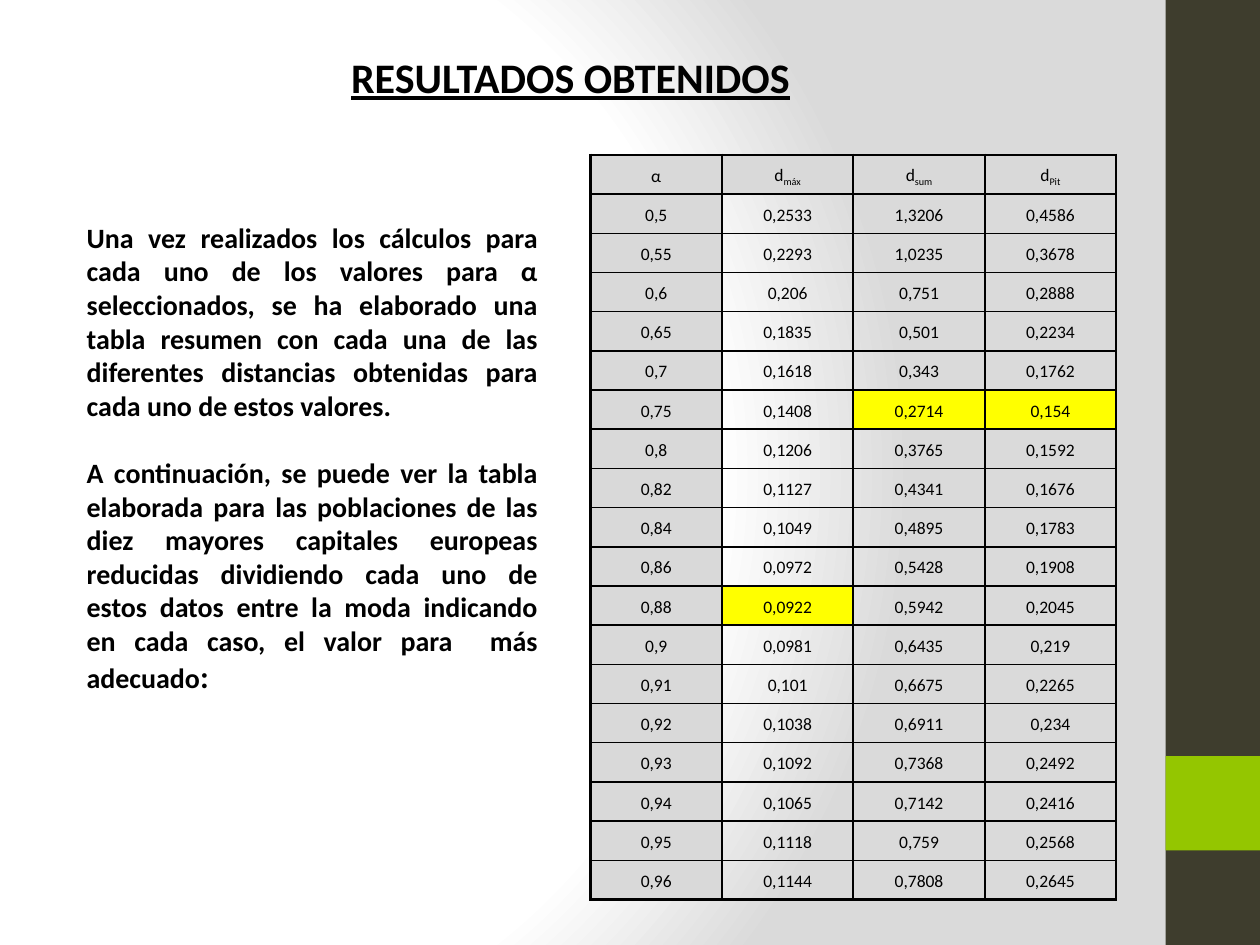
from pptx import Presentation
from pptx.dml.color import RGBColor
from pptx.enum.shapes import MSO_SHAPE as Shape
from pptx.enum.text import MSO_ANCHOR as Anchor, PP_ALIGN as Align
from pptx.oxml import parse_xml
from pptx.oxml.ns import nsdecls, qn
from pptx.util import Pt

BLACK = RGBColor(0x00, 0x00, 0x00)
OLIVE = RGBColor(0x3E, 0x3D, 0x2D)
GREEN = RGBColor(0x94, 0xC6, 0x00)
GRAY = RGBColor(0xD9, 0xD9, 0xD9)
YELLOW = RGBColor(0xFF, 0xFF, 0x00)

INTRO = (
    "Una vez realizados los cálculos para cada uno de los valores para α "
    "seleccionados, se ha elaborado una tabla resumen con cada una de las "
    "diferentes distancias obtenidas para cada uno de estos valores."
)
LEAD_IN = (
    "A continuación, se puede ver la tabla elaborada para las poblaciones de "
    "las diez mayores capitales europeas reducidas dividiendo cada uno de estos "
    "datos entre la moda indicando en cada caso, el valor para  más adecuado"
)
HEADERS = [("α", ""), ("d", "máx"), ("d", "sum"), ("d", "Pit")]
DISTANCES = """
0,5 0,2533 1,3206 0,4586
0,55 0,2293 1,0235 0,3678
0,6 0,206 0,751 0,2888
0,65 0,1835 0,501 0,2234
0,7 0,1618 0,343 0,1762
0,75 0,1408 0,2714 0,154
0,8 0,1206 0,3765 0,1592
0,82 0,1127 0,4341 0,1676
0,84 0,1049 0,4895 0,1783
0,86 0,0972 0,5428 0,1908
0,88 0,0922 0,5942 0,2045
0,9 0,0981 0,6435 0,219
0,91 0,101 0,6675 0,2265
0,92 0,1038 0,6911 0,234
0,93 0,1092 0,7368 0,2492
0,94 0,1065 0,7142 0,2416
0,95 0,1118 0,759 0,2568
0,96 0,1144 0,7808 0,2645
"""
MINIMA = {"0,0922", "0,2714", "0,154"}


def add_text(para, text, size=10, bold=False, underline=False, subscript=False):
    span = para.add_run()
    span.text = text
    span.font.name = "Calibri"
    span.font.size = Pt(size)
    span.font.bold = bold
    span.font.underline = underline
    span.font.color.rgb = BLACK
    if subscript:
        span.font._element.set("baseline", "-25000")


def set_border(cell, side, width):
    cell._tc.get_or_add_tcPr().append(parse_xml(
        f'<a:ln{side} {nsdecls("a")} w="{Pt(width)}"><a:solidFill>'
        f'<a:srgbClr val="{BLACK}"/></a:solidFill></a:ln{side}>'))


deck = Presentation()
deck.slide_width, deck.slide_height = Pt(720), Pt(540)
page = deck.slides.add_slide(deck.slide_layouts[5])

# Background: radial fade from white to light gray
page.background.fill.gradient()
fade = page.element.find(".//" + qn("a:gradFill"))
fade.getparent().replace(fade, parse_xml(
    f'<a:gradFill {nsdecls("a")} rotWithShape="1"><a:gsLst>'
    '<a:gs pos="0"><a:srgbClr val="FFFFFF"/></a:gs>'
    '<a:gs pos="75000"><a:srgbClr val="FFFFFF"/></a:gs>'
    '<a:gs pos="100000"><a:srgbClr val="DADADA"/></a:gs></a:gsLst>'
    '<a:path path="circle"><a:fillToRect l="20000" t="50000" r="100000" b="50000"/>'
    '</a:path></a:gradFill>'))

# Side band
for top, height, color in [(0, 540, OLIVE), (432, 54, GREEN)]:
    band = page.shapes.add_shape(Shape.RECTANGLE, Pt(666), Pt(top), Pt(54), Pt(height))
    band.shadow.inherit = False
    band.fill.solid()
    band.fill.fore_color.rgb = color
    band.line.fill.background()

# Title
title = page.shapes.title
title.left, title.top, title.width, title.height = Pt(54), Pt(26), Pt(544), Pt(36)
title.text_frame.vertical_anchor = Anchor.TOP
para = title.text_frame.paragraphs[0]
para.alignment = Align.CENTER
add_text(para, "RESULTADOS OBTENIDOS", size=24, bold=True, underline=True)

# Explanation
box = page.shapes.add_textbox(Pt(42.5), Pt(122.4), Pt(272), Pt(303))
box.text_frame.word_wrap = True
intro = box.text_frame.paragraphs[0]
lead_in = box.text_frame.add_paragraph()
lead_in.space_before = Pt(19.2)
for para, text in [(intro, INTRO), (lead_in, LEAD_IN)]:
    para.alignment = Align.JUSTIFY
    add_text(para, text, size=16, bold=True)
add_text(lead_in, ":", size=18, bold=True)

# Table of distances
rows = [HEADERS] + [[(value, "") for value in line.split()]
                    for line in DISTANCES.strip().splitlines()]
last = len(rows) - 1
table = page.shapes.add_table(len(rows), len(HEADERS), Pt(337.4), Pt(88.5),
                              Pt(300.4), Pt(425.6)).table
table.first_row = table.horz_banding = False
for column in table.columns:
    column.width = Pt(75.1)
for r, values in enumerate(rows):
    table.rows[r].height = Pt(22.4)
    for c, (text, index) in enumerate(values):
        cell = table.cell(r, c)
        cell.vertical_anchor = Anchor.MIDDLE
        cell.margin_left = cell.margin_right = Pt(3)
        cell.margin_top = cell.margin_bottom = 0
        set_border(cell, "L", 1.5)
        set_border(cell, "R", 1.5)
        set_border(cell, "T", 1.5 if r <= 1 else 1)
        set_border(cell, "B", 1.5 if r in (0, last) else 1)
        if r == 0 or c == 0 or text in MINIMA:
            cell.fill.solid()
            cell.fill.fore_color.rgb = YELLOW if text in MINIMA else GRAY
        else:
            cell.fill.background()
        para = cell.text_frame.paragraphs[0]
        para.alignment = Align.CENTER
        para.line_spacing = 1.15
        add_text(para, text)
        if index:
            add_text(para, index, subscript=True)

deck.save("out.pptx")
